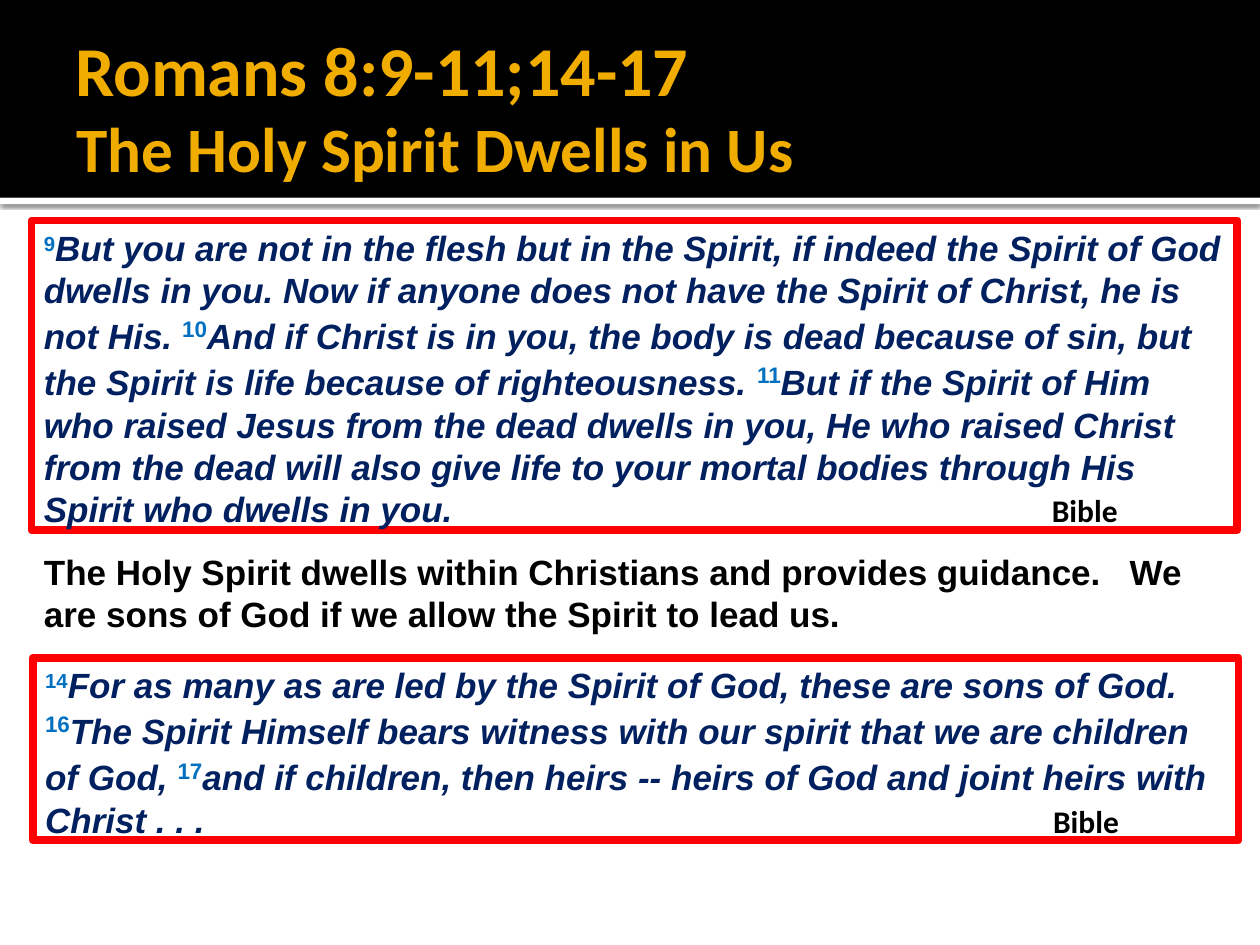
from lxml.etree import SubElement
from pptx import Presentation
from pptx.dml.color import RGBColor
from pptx.enum.shapes import MSO_SHAPE
from pptx.enum.text import MSO_ANCHOR
from pptx.oxml.ns import qn
from pptx.util import Pt

BLACK, WHITE, GOLD, RED = "000000", "FFFFFF", "F0AD00", "FF0000"
NAVY, BLUE = "002060", "0070C0"
TAB_POSITION = 576
TRANSLATION = "Bible"

# text, size, (left, top, width, height)
TITLES = [
    ("Romans 8:9-11;14-17", 40, (36, 12.24, 445.68, 53.28)),
    ("The Holy Spirit Dwells in Us", 36.1, (36.72, 52.56, 589.68, 62.64)),
]
COMMENT = ("The Holy Spirit dwells within Christians and provides guidance.   "
           "We are sons of God if we allow the Spirit to lead us.")
COMMENT_BOX = (18, 311.04, 689.76, 55.44)

# (left, top, width, height), [(verse number, number size, verse text)]
PASSAGES = [
    ((18, 126, 689.04, 177.12), [
        ("9", 20, "But you are not in the flesh but in the Spirit, if indeed the "
                  "Spirit of God dwells in you. Now if anyone does not have the "
                  "Spirit of Christ, he is not His. "),
        ("10", 22, "And if Christ is in you, the body is dead because of sin, but "
                   "the Spirit is life because of righteousness. "),
        ("11", 22, "But if the Spirit of Him who raised Jesus from the dead dwells "
                   "in you, He who raised Christ from the dead will also give life "
                   "to your mortal bodies through His Spirit who dwells in you."),
    ]),
    ((18.72, 375.84, 689.04, 104.4), [
        ("14", 20, "For as many as are led by the Spirit of God, these are sons of God. "),
        ("16", 22, "The Spirit Himself bears witness with our spirit that we are "
                   "children of God, "),
        ("17", 22, "and if children, then heirs -- heirs of God and joint heirs "
                   "with Christ . . ."),
    ]),
]


def color(value):
    return RGBColor.from_string(value)


def add_text(paragraph, text, size=20, font="Arial", fill=BLACK, italic=False, raised=False):
    run = paragraph.add_run()
    run.text = text
    run.font.name, run.font.size = font, Pt(size)
    run.font.bold, run.font.italic = True, italic
    run.font.color.rgb = color(fill)
    if raised:
        run.font._element.set("baseline", "30000")


def add_box(slide, box, anchor=MSO_ANCHOR.TOP, outline=None):
    """Add a wrapping text box and return its first paragraph."""
    shape = slide.shapes.add_textbox(*map(Pt, box))
    frame = shape.text_frame
    frame.word_wrap = True
    frame.vertical_anchor = anchor
    if outline:
        shape.line.color.rgb = color(outline)
        shape.line.width = Pt(4.5)
    return frame.paragraphs[0]


def add_band(slide, top, height, fill):
    shape = slide.shapes.add_shape(MSO_SHAPE.RECTANGLE, 0, Pt(top), Pt(720), Pt(height))
    shape.shadow.inherit = False
    shape.fill.solid()
    shape.fill.fore_color.rgb = color(fill)
    shape.line.fill.background()
    return shape


def add_shadow(shape):
    effects = shape._element.spPr.find(qn("a:effectLst"))
    shadow = SubElement(effects, qn("a:outerShdw"), blurRad=str(Pt(2.5)),
                        dist=str(Pt(0.8)), dir="5400000", algn="tl", rotWithShape="0")
    shade = SubElement(shadow, qn("a:srgbClr"), val=BLACK)
    SubElement(shade, qn("a:alpha"), val="60000")


def add_tab_stop(paragraph, position):
    tabs = SubElement(paragraph._p.get_or_add_pPr(), qn("a:tabLst"))
    SubElement(tabs, qn("a:tab"), pos=str(Pt(position)), algn="l")


def add_passage(slide, box, verses):
    paragraph = add_box(slide, box, outline=RED)
    add_tab_stop(paragraph, TAB_POSITION)
    for number, size, verse in verses:
        add_text(paragraph, number, size=size, fill=BLUE, raised=True)
        add_text(paragraph, verse, fill=NAVY, italic=True)
    add_text(paragraph, "\t" + TRANSLATION, size=18, font="Calibri")


def main():
    presentation = Presentation()
    presentation.slide_width, presentation.slide_height = Pt(720), Pt(540)
    slide = presentation.slides.add_slide(presentation.slide_layouts[6])

    add_shadow(add_band(slide, 113.04, 3.6, WHITE))
    add_band(slide, 0, 113.04, BLACK)
    for text, size, box in TITLES:
        paragraph = add_box(slide, box, anchor=MSO_ANCHOR.MIDDLE)
        add_text(paragraph, text, size=size, font="Calibri", fill=GOLD)
    for box, verses in PASSAGES:
        add_passage(slide, box, verses)
    add_text(add_box(slide, COMMENT_BOX), COMMENT)

    presentation.save("out.pptx")


if __name__ == "__main__":
    main()
